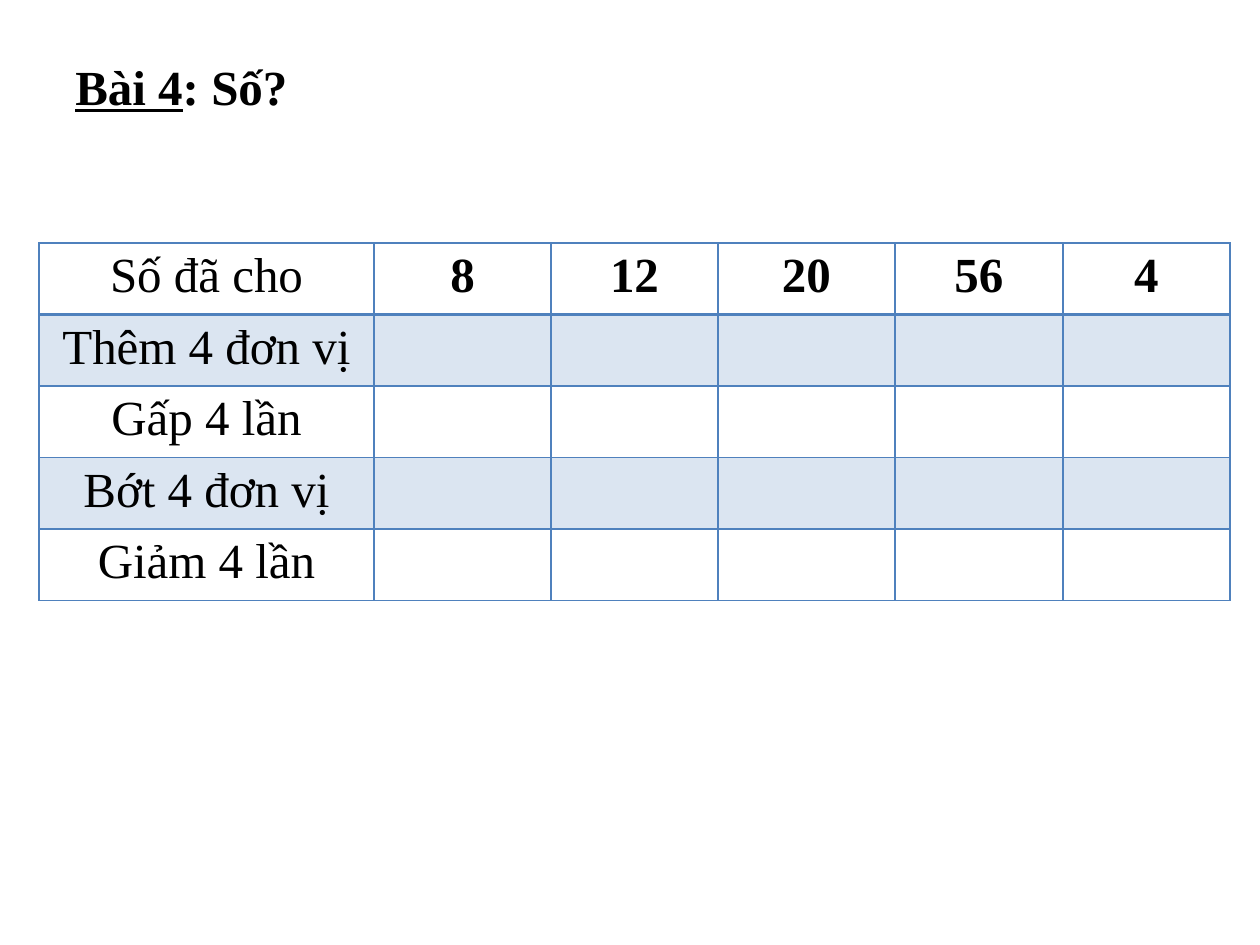
from lxml import etree
from pptx import Presentation
from pptx import util as u
from pptx.dml.color import RGBColor
from pptx.enum import text
from pptx.oxml.ns import qn

PX = 914400 // 126
FONT = "Times New Roman"
SIZE = 28
HUES = {"ink": "000000", "blue": "4F81BD"}
TITLE = [("\t", False), ("Bài 4", True), (": Số?", False)]
HEAD = ["Số đã cho", "8", "12", "20", "56", "4"]
LABELS = ["Thêm 4 đơn vị", "Gấp 4 lần", "Bớt 4 đơn vị", "Giảm 4 lần"]
WIDTHS = [335, 177, 167, 177, 168, 167]
BOX = (0, 44, 1260, 131)
GRID = (39, 243, sum(WIDTHS), 357)


def scale(area):
    return [n * PX for n in area]


def style(font, bold):
    font.name = FONT
    font.size = u.Pt(SIZE)
    font.bold = bold
    font.color.rgb = RGBColor.from_string(HUES["ink"])


def paint(node, alpha=None):
    fill = etree.SubElement(node, qn("a:solidFill"))
    hue = etree.SubElement(fill, qn("a:srgbClr"), val=HUES["blue"])
    if alpha:
        etree.SubElement(hue, qn("a:alpha"), val=str(alpha * 1000))


def dress(cell, row):
    props = cell._tc.get_or_add_tcPr()
    wide = {"T": 2 if row == 1 else 1, "B": 2 if row == 0 else 1}
    for side in "LRTB":
        width = u.Pt(wide.get(side, 1))
        paint(etree.SubElement(props, qn("a:ln" + side), w=str(width)))
    if row % 2:
        paint(props, 20)
    else:
        etree.SubElement(props, qn("a:noFill"))


def add_title(slide):
    frame = slide.shapes.add_textbox(*scale(BOX)).text_frame
    frame.word_wrap = True
    frame.margin_top = 12 * PX
    for words, line in TITLE:
        run = frame.paragraphs[0].add_run()
        run.text = words
        style(run.font, True)
        run.font.underline = line


def add_grid(slide):
    rows = [HEAD] + [[label] + [""] * (len(HEAD) - 1) for label in LABELS]
    table = slide.shapes.add_table(len(rows), len(HEAD), *scale(GRID)).table
    for col, width in zip(table.columns, WIDTHS):
        col.width = width * PX
    for r, row in enumerate(rows):
        for c, words in enumerate(row):
            cell = table.cell(r, c)
            dress(cell, r)
            para = cell.text_frame.paragraphs[0]
            para.text = words
            para.alignment = text.PP_ALIGN.CENTER
            for run in para.runs:
                style(run.font, c > 0)


def main():
    deck = Presentation()
    deck.slide_width, deck.slide_height = u.Inches(10), u.Inches(7.5)
    slide = deck.slides.add_slide(deck.slide_layouts[6])
    add_title(slide)
    add_grid(slide)
    deck.save("out.pptx")


if __name__ == "__main__":
    main()
